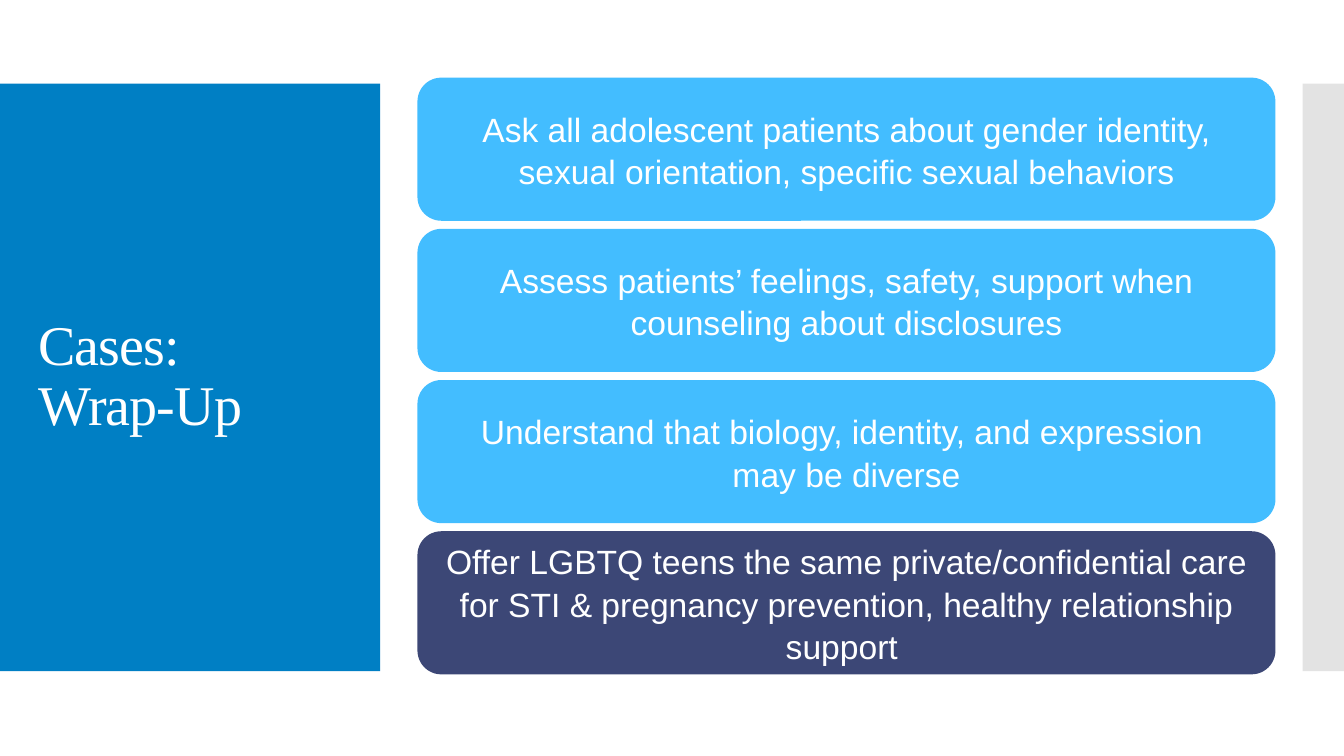
"""Builds the "Cases: Wrap-Up" slide with its four take-away cards."""
from dataclasses import dataclass

from lxml.etree import SubElement
from pptx import Presentation
from pptx.dml.color import RGBColor
from pptx.enum.shapes import MSO_SHAPE
from pptx.enum.text import MSO_ANCHOR, PP_ALIGN
from pptx.oxml.ns import qn
from pptx.shapes.autoshape import Shape
from pptx.slide import Slide
from pptx.text.text import TextFrame
from pptx.util import Emu, Pt

EMU_PER_PX = 9144
CARD_LEFT, CARD_TOP, CARD_WIDTH, CARD_HEIGHT, CARD_STEP = 414, 77, 851, 142, 150
WHITE = "FFFFFF"


@dataclass(frozen=True)
class Box:
    left: int
    top: int
    width: int
    height: int


@dataclass(frozen=True)
class Takeaway:
    text: str
    fill: str = "43BDFF"


TAKEAWAYS = [
    Takeaway("Ask all adolescent patients about gender identity, "
             "sexual orientation, specific sexual behaviors"),
    Takeaway("Assess patients’ feelings, safety, support when "
             "counseling about disclosures"),
    Takeaway("Understand that biology, identity, and expression \vmay be diverse"),
    Takeaway("Offer LGBTQ teens the same private/confidential care for STI & "
             "pregnancy prevention, healthy relationship support ", "3C4776"),
]


def px(length: int) -> Emu:
    return Emu(length * EMU_PER_PX)


def rgb(color: str) -> RGBColor:
    return RGBColor.from_string(color)


def add_block(slide: Slide, preset: MSO_SHAPE, box: Box, fill: str) -> Shape:
    block = slide.shapes.add_shape(
        preset, px(box.left), px(box.top), px(box.width), px(box.height))
    block.shadow.inherit = False
    block.fill.solid()
    block.fill.fore_color.rgb = rgb(fill)
    block.line.fill.background()
    return block


def set_text(frame: TextFrame, text: str, font: str, size: int,
             align: PP_ALIGN, spacing: float) -> None:
    frame.text = text
    frame.word_wrap = True
    frame.vertical_anchor = MSO_ANCHOR.MIDDLE
    for paragraph in frame.paragraphs:
        paragraph.alignment = align
        paragraph.line_spacing = spacing
        for run in paragraph.runs:
            run.font.name = font
            run.font.size = Pt(size)
            run.font.color.rgb = rgb(WHITE)


def add_side_panels(slide: Slide) -> None:
    add_block(slide, MSO_SHAPE.RECTANGLE, Box(0, 83, 377, 583), "007FC4")
    edge = add_block(slide, MSO_SHAPE.RECTANGLE, Box(1292, 83, 41, 583), "C8C8C8")
    edge_color = edge.element.spPr.find(qn("a:solidFill")).find(qn("a:srgbClr"))
    SubElement(edge_color, qn("a:alpha")).set("val", "50000")


def place_title(slide: Slide) -> None:
    title = slide.shapes.title
    title.left, title.top, title.width, title.height = map(px, (28, 123, 322, 503))
    set_text(title.text_frame, "Cases: \vWrap-Up", "Times New Roman", 40,
             PP_ALIGN.LEFT, 0.9)
    for run in title.text_frame.paragraphs[0].runs:
        run.font._element.set("spc", "-60")
    slide.shapes.element.append(title.element)


def add_card(slide: Slide, row: int, takeaway: Takeaway) -> None:
    box = Box(CARD_LEFT, CARD_TOP + row * CARD_STEP, CARD_WIDTH, CARD_HEIGHT)
    card = add_block(slide, MSO_SHAPE.ROUNDED_RECTANGLE, box, takeaway.fill)
    frame = card.text_frame
    frame.margin_left = frame.margin_right = px(12)
    frame.margin_top = frame.margin_bottom = px(0)
    set_text(frame, takeaway.text, "Arial", 24, PP_ALIGN.CENTER, 1.05)


def main() -> None:
    deck = Presentation()
    deck.slide_width, deck.slide_height = px(1333), px(750)
    slide = deck.slides.add_slide(deck.slide_layouts[5])
    add_side_panels(slide)
    place_title(slide)
    for row, takeaway in enumerate(TAKEAWAYS):
        add_card(slide, row, takeaway)
    deck.save("out.pptx")


if __name__ == "__main__":
    main()
